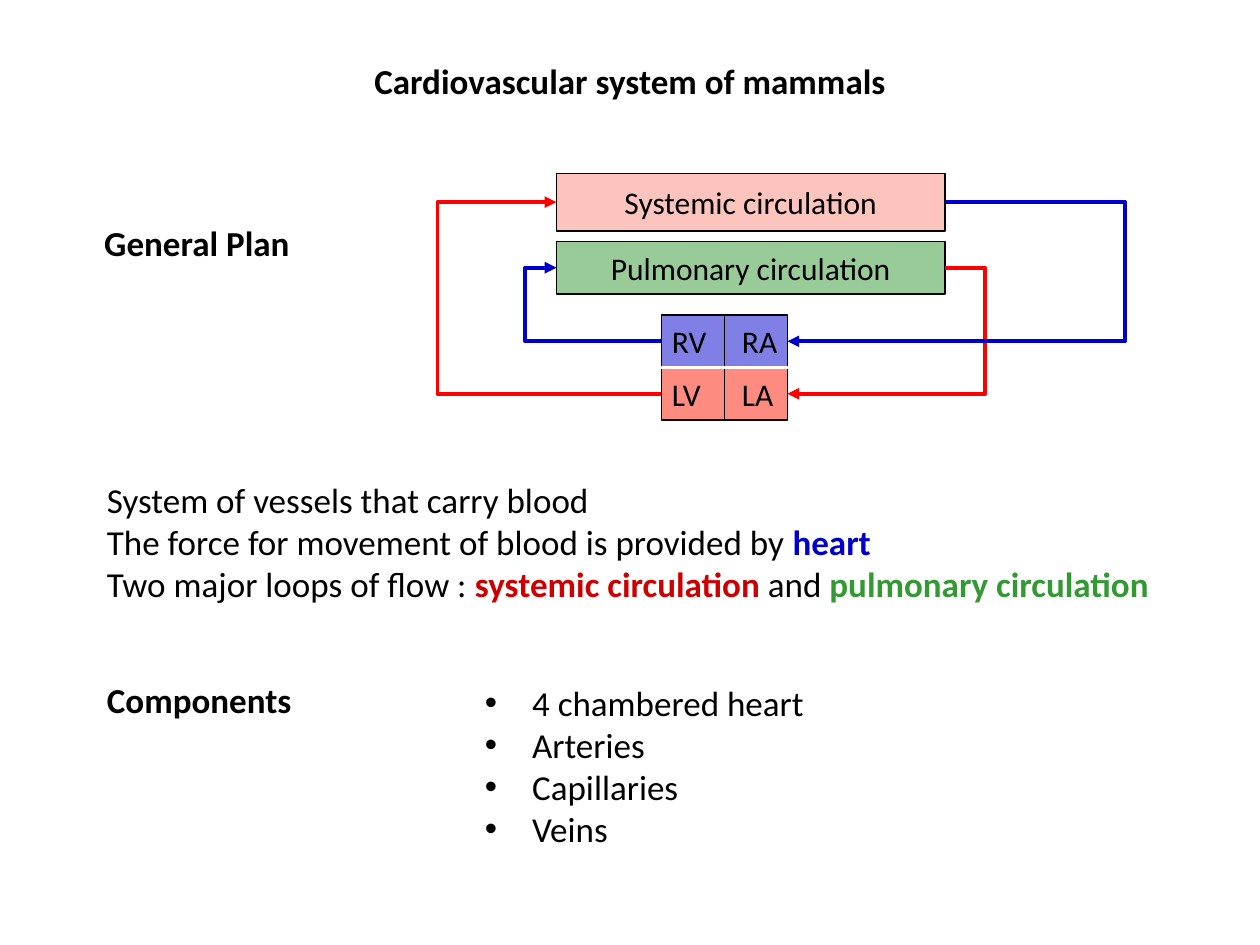
from dataclasses import dataclass

from lxml import etree
from pptx import Presentation
from pptx import util as u
from pptx.dml.color import RGBColor
from pptx.enum import shapes, text
from pptx.oxml.ns import qn

Pt = u.Pt


@dataclass(frozen=True)
class Theme:
    font: str = "Calibri"
    body_size: int = 20
    box_size: int = 18
    thin: float = 0.75
    thick: float = 2.25
    black: str = "000000"
    white: str = "FFFFFF"
    blue: str = "0000CC"
    red: str = "FF0000"
    dark_red: str = "CC0000"
    salmon: str = "FD8B7F"
    green: str = "339933"


theme = Theme()


def style_font(font, size, color=theme.black, bold=False):
    font.name = theme.font
    font.size = Pt(size)
    font.bold = bold
    font.color.rgb = RGBColor.from_string(color)


def add_line(kind, start, end, color, width):
    line = slide.shapes.add_connector(kind, *(Pt(value) for value in start + end))
    line.line.color.rgb = RGBColor.from_string(color)
    line.line.width = Pt(width)
    etree.SubElement(line._element.spPr, qn("a:effectLst"))
    return line


presentation = Presentation()
presentation.slide_width, presentation.slide_height = Pt(720), Pt(540)
slide = presentation.slides.add_slide(presentation.slide_layouts[5])

# Title
title = slide.shapes.title
title.left, title.top, title.width, title.height = Pt(189), Pt(30), Pt(342), Pt(32)
title.text_frame.text = "Cardiovascular system of mammals"
style_font(title.text_frame.paragraphs[0].font, theme.body_size, bold=True)

# Headings, description and component list: each paragraph is a list of (text, color, bold)
black = theme.black
text_blocks = [
    ((54, 270, 614, 80), False, [
        [("System of vessels that carry blood", black, False)],
        [("The force for movement of blood is provided by ", black, False),
         ("heart", theme.blue, True)],
        [("Two major loops of flow : ", black, False),
         ("systemic circulation", theme.dark_red, True),
         (" and ", black, False),
         ("pulmonary circulation", theme.green, True)],
    ]),
    ((52.5, 123, 122, 32), False, [[("General Plan", black, True)]]),
    ((54, 384, 121, 32), False, [[("Components", black, True)]]),
    ((270, 386, 199, 104), True, [
        [(item, black, False)]
        for item in ("4 chambered heart", "Arteries", "Capillaries", "Veins")
    ]),
]
for bounds, bulleted, paragraphs in text_blocks:
    frame = slide.shapes.add_textbox(*(Pt(value) for value in bounds)).text_frame
    frame.word_wrap = False
    frame.auto_size = text.MSO_AUTO_SIZE.SHAPE_TO_FIT_TEXT
    for index, parts in enumerate(paragraphs):
        paragraph = frame.paragraphs[0] if index == 0 else frame.add_paragraph()
        if bulleted:
            properties = paragraph._p.get_or_add_pPr()
            properties.set("marL", str(Pt(27)))
            properties.set("indent", str(-Pt(27)))
            etree.SubElement(properties, qn("a:buFont"), typeface="Arial")
            etree.SubElement(properties, qn("a:buChar"), char="•")
        for words, color, bold in parts:
            run = paragraph.add_run()
            run.text = words
            if len(parts) > 1:
                style_font(run.font, theme.body_size, color, bold)
        if len(parts) == 1:
            style_font(paragraph.font, theme.body_size, parts[0][1], parts[0][2])

# Circulation boxes and heart chambers; a tab separates ventricle from atrium
boxes = {}
for label, bounds, fill, opacity in [
    ("RV\tRA", (378, 180, 72, 30), theme.blue, 50),
    ("LV\tLA", (378, 210, 72, 30), theme.salmon, 100),
    ("Pulmonary circulation", (318, 138, 222, 30), theme.green, 50),
    ("Systemic circulation", (318, 99, 222, 33), theme.salmon, 50),
]:
    box = slide.shapes.add_shape(
        shapes.MSO_SHAPE.RECTANGLE, *(Pt(value) for value in bounds))
    box.shadow.inherit = False
    box.fill.solid()
    box.fill.fore_color.rgb = RGBColor.from_string(fill)
    if opacity < 100:
        fill_color = box._element.spPr.find(qn("a:solidFill"))[0]
        etree.SubElement(fill_color, qn("a:alpha"), val=str(opacity * 1000))
    box.line.color.rgb = RGBColor.from_string(theme.black)
    box.line.width = Pt(theme.thin)
    frame = box.text_frame
    frame.vertical_anchor = text.MSO_ANCHOR.MIDDLE
    frame.word_wrap = True
    frame.text = label
    paragraph = frame.paragraphs[0]
    paragraph.alignment = text.PP_ALIGN.CENTER
    if "\t" in label:
        paragraph.alignment = text.PP_ALIGN.LEFT
        frame.margin_left, frame.margin_right = Pt(6), Pt(0)
        tabs = etree.SubElement(paragraph._p.get_or_add_pPr(), qn("a:tabLst"))
        etree.SubElement(tabs, qn("a:tab"), pos=str(Pt(40)), algn="l")
    style_font(paragraph.font, theme.box_size)
    boxes[label] = box

# Blood flow: elbow arrows whose middle leg stands at bend_x
systemic_y, pulmonary_y, right_heart_y, left_heart_y = 115.5, 153, 195, 225
for start, end, bend_x, color in [
    ((378, right_heart_y), (318, pulmonary_y), 300, theme.blue),
    ((540, pulmonary_y), (450, left_heart_y), 563, theme.red),
    ((378, left_heart_y), (318, systemic_y), 250, theme.red),
    ((540, systemic_y), (450, right_heart_y), 643, theme.blue),
]:
    arrow = add_line(shapes.MSO_CONNECTOR.ELBOW, start, end, color, theme.thick)
    etree.SubElement(arrow.line._get_or_add_ln(), qn("a:tailEnd"), type="triangle")
    geometry = arrow._element.spPr.find(qn("a:prstGeom"))
    adjustments = geometry.find(qn("a:avLst"))
    if adjustments is None:
        adjustments = etree.SubElement(geometry, qn("a:avLst"))
    bend = round((bend_x - start[0]) / (end[0] - start[0]) * 100000)
    etree.SubElement(adjustments, qn("a:gd"), name="adj1", fmla=f"val {bend}")

# Walls between the heart chambers
straight = shapes.MSO_CONNECTOR.STRAIGHT
wall = add_line(straight, (414, 240), (414, 180), theme.black, theme.thin)
wall.begin_connect(boxes["LV\tLA"], 2)
wall.end_connect(boxes["RV\tRA"], 0)
add_line(straight, (366, 210), (456, 210), theme.white, theme.thick)

presentation.save("out.pptx")
